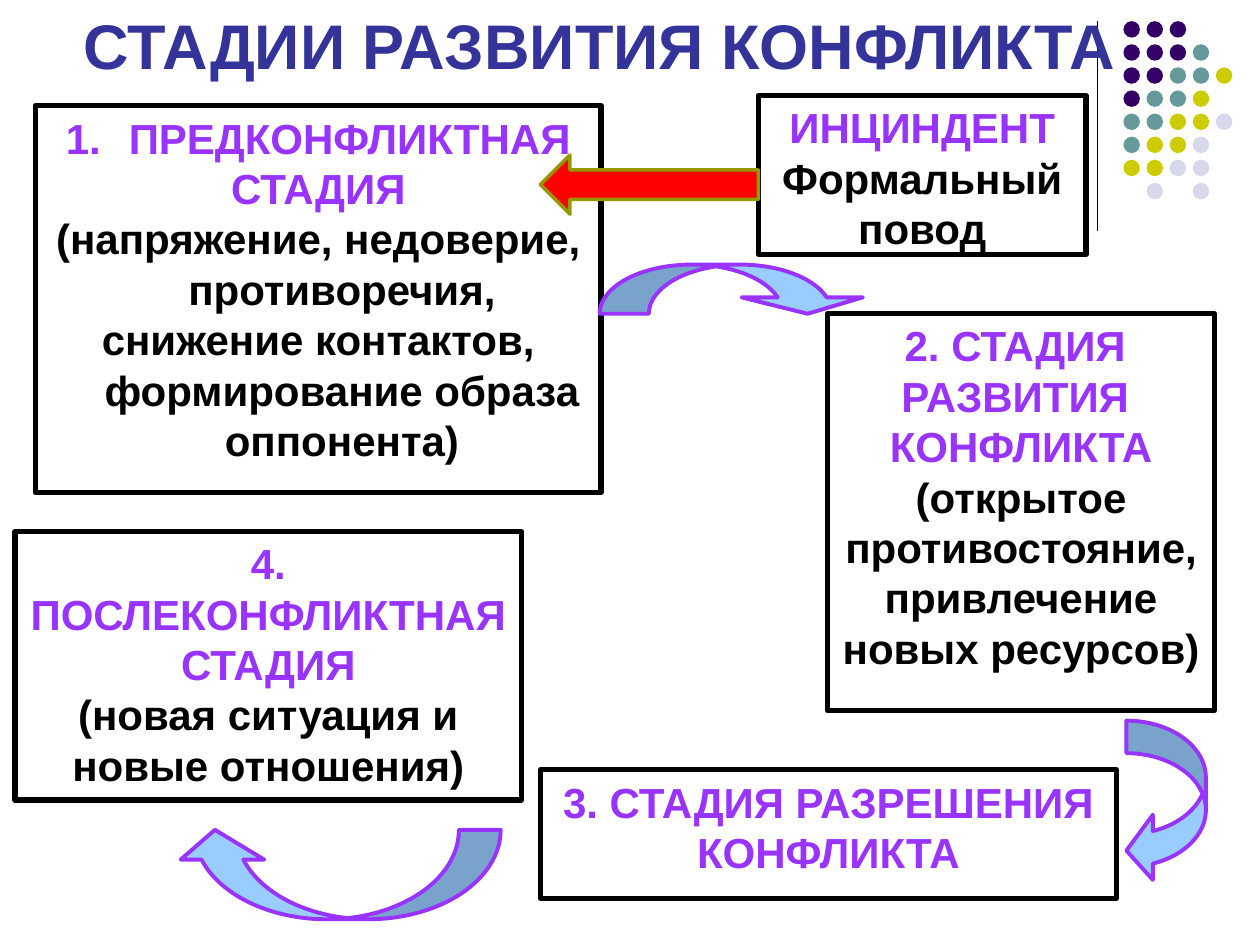
import pptx
import pptx.dml.color
import pptx.enum.shapes
import pptx.enum.text
import pptx.oxml
import pptx.oxml.ns
import pptx.util

Pt = pptx.util.Pt
SHAPE = pptx.enum.shapes.MSO_SHAPE
BLACK, WHITE, VIOLET, SKY = "000000", "FFFFFF", "9933FF", "99CCFF"
DOTS = ["PPP", "PPPT", "PPTTY", "PTTY", "TTYYL", "TYYL", "YYLL", " L L"]
SHADES = {"P": "330066", "T": "669999", "Y": "CCCC00", "L": "D8D8EC"}


def color(code):
    return pptx.dml.color.RGBColor.from_string(code)


def add_shape(slide, kind, place, fill, line=None, width=0):
    shape = slide.shapes.add_shape(kind, *[Pt(n) for n in place])
    shape.shadow.inherit = False
    shape.fill.solid()
    shape.fill.fore_color.rgb = color(fill)
    if line:
        shape.line.color.rgb = color(line)
        shape.line.width = Pt(width)
    else:
        shape.line.fill.background()
    return shape


def add_text(frame, lines, size):
    """Fill a frame with (text, colour) paragraphs, centred from the top."""
    frame.word_wrap = True
    frame.vertical_anchor = pptx.enum.text.MSO_ANCHOR.TOP
    frame.text = "\n".join(text for text, _ in lines)
    for para, (_, code) in zip(frame.paragraphs, lines):
        para.alignment = pptx.enum.text.PP_ALIGN.CENTER
        para.line_spacing = Pt(size * 1.2)
        font = para.runs[0].font
        font.name, font.size, font.bold = "Arial", Pt(size), True
        font.color.rgb = color(code)


def add_title(slide, text):
    box = slide.shapes.add_textbox(Pt(31), Pt(0), Pt(623.5), Pt(102))
    add_text(box.text_frame, [(text, "333399")], 36)
    box.text_frame.paragraphs[0].space_before = Pt(3)


def add_box(slide, place, heads, body=()):
    box = add_shape(slide, SHAPE.RECTANGLE, place, WHITE, BLACK, 3)
    lines = [(text, VIOLET) for text in heads] + [(text, BLACK) for text in body]
    add_text(box.text_frame, lines, 24)
    return box


def hang(para, indent):
    props = para._p.get_or_add_pPr()
    props.set("marL", str(Pt(indent)))
    props.set("indent", str(-Pt(indent)))
    return props


def number(para, indent):
    props = hang(para, indent)
    mark = pptx.oxml.parse_xml(
        '<a:buAutoNum %s type="arabicPeriod"/>' % pptx.oxml.ns.nsdecls("a"))
    props.append(mark)


def add_curve(slide, kind, place, bend):
    curve = add_shape(slide, kind, place, SKY, VIOLET, 2.25)
    for i, value in enumerate((bend, 2 * bend, 0.333)):
        curve.adjustments[i] = value
    return curve


def add_rule(slide):
    rule = slide.shapes.add_connector(
        pptx.enum.shapes.MSO_CONNECTOR.STRAIGHT, Pt(627), Pt(12), Pt(627), Pt(132))
    rule.line.color.rgb = color(BLACK)
    rule.line.width = Pt(0.75)
    rule._element.spPr.append(
        pptx.oxml.parse_xml("<a:effectLst %s/>" % pptx.oxml.ns.nsdecls("a")))


def add_dots(slide):
    step, size = 13.2, 9.4
    for row, marks in enumerate(DOTS):
        for col, mark in enumerate(marks):
            if mark in SHADES:
                place = (642 + col * step, 12.1 + row * step, size, size)
                add_shape(slide, SHAPE.OVAL, place, SHADES[mark])


def main():
    deck = pptx.Presentation()
    deck.slide_width, deck.slide_height = Pt(720), Pt(540)
    slide = deck.slides.add_slide(deck.slide_layouts[6])

    add_rule(slide)
    add_dots(slide)
    add_title(slide, "СТАДИИ РАЗВИТИЯ КОНФЛИКТА")

    add_box(slide, (8.6, 303.8, 289.4, 153.4),
            ["4. ПОСЛЕКОНФЛИКТНАЯ СТАДИЯ"],
            ["(новая ситуация и новые отношения)"])
    first = add_box(slide, (20.2, 60.5, 323.3, 221),
                    ["ПРЕДКОНФЛИКТНАЯ", "СТАДИЯ"],
                    ["(напряжение, недоверие, противоречия,",
                     "снижение контактов, формирование образа оппонента)"])
    head, *rest = first.text_frame.paragraphs
    number(head, 36)
    for para in rest:
        hang(para, 27)

    add_curve(slide, SHAPE.CURVED_DOWN_ARROW, (342.7, 151.2, 153.4, 28.1), 1.234)
    add_box(slide, (433.4, 54.7, 187.2, 90.7),
            ["ИНЦИНДЕНТ"], ["Формальный", "повод"])
    add_box(slide, (473, 179.3, 221, 226.8),
            ["2. СТАДИЯ ", "РАЗВИТИЯ ", "КОНФЛИКТА"],
            ["(открытое противостояние, привлечение новых ресурсов)"])
    add_box(slide, (308.9, 439.9, 329, 73.4),
            ["3. СТАДИЯ РАЗРЕШЕНИЯ КОНФЛИКТА"])
    add_curve(slide, SHAPE.CURVED_LEFT_ARROW, (643.7, 411.8, 45.4, 92.9), 0.41)

    back = add_curve(slide, SHAPE.CURVED_LEFT_ARROW, (167, 406.1, 51.1, 187.2), 0.467)
    back.rotation = 270
    for flip in ("flipH", "flipV"):
        back._element.spPr.xfrm.set(flip, "1")

    cause = add_shape(slide, SHAPE.DOWN_ARROW, (354.2, 43.2, 33.8, 124.6),
                      "FF0000", "979700", 2)
    cause.rotation = 90
    deck.save("out.pptx")


if __name__ == "__main__":
    main()
